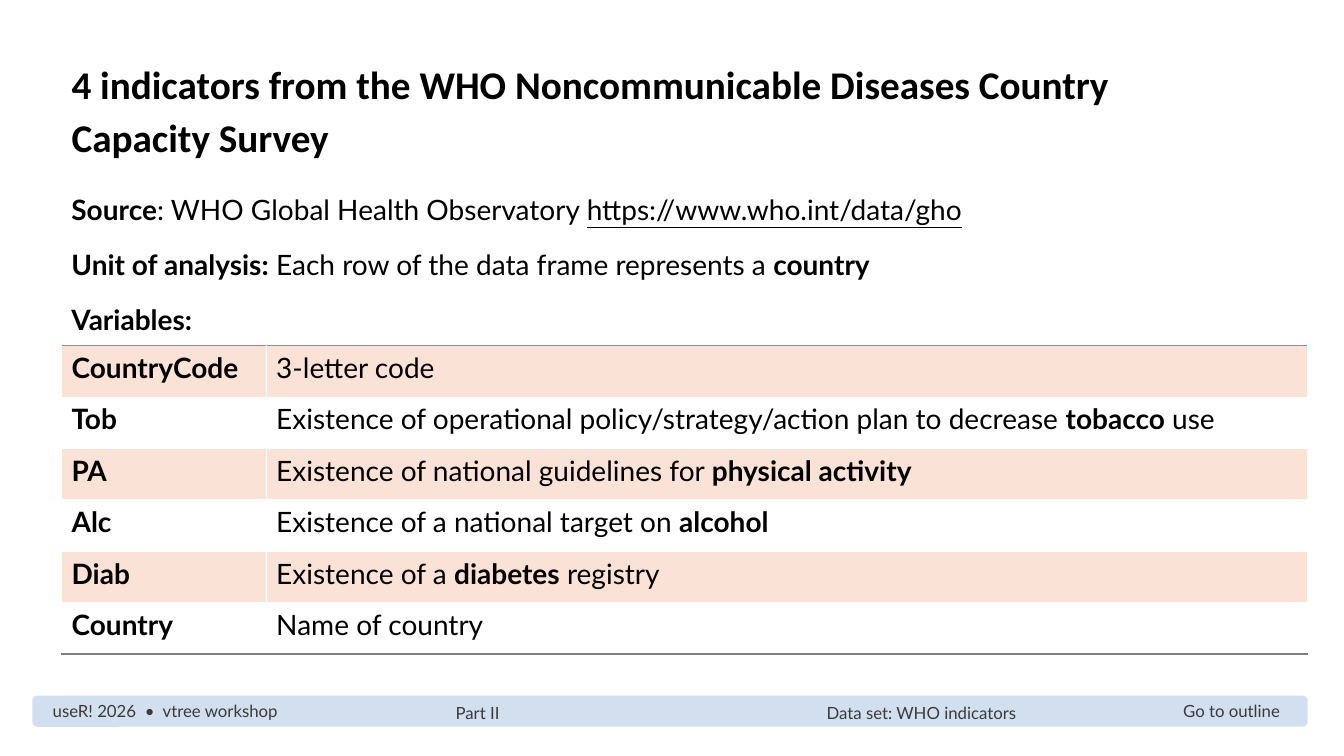
import pptx
import pptx.dml.color
import pptx.enum.shapes
import pptx.enum.text
import pptx.oxml
import pptx.oxml.ns
import pptx.util
from pptx.util import Inches

COLORS = {
    "text": "000000",
    "footer_text": "3A3A3A",
    "footer_bar": "D2DFEE",
    "accent": "E97132",
    "bottom_rule": "7F7F7F",
}
ALIGN = pptx.enum.text.PP_ALIGN
ANCHOR = pptx.enum.text.MSO_ANCHOR

FACTS = [
    [("Source", "b"), (": WHO Global Health Observatory ", ""),
     ("https://www.who.int/data/gho", "u")],
    [("Unit of analysis:", "b"),
     (" Each row of the data frame represents a ", ""), ("country", "b")],
    [("Variables:", "b")],
]
VARIABLES = [
    ("CountryCode", [("3-letter code", "")]),
    ("Tob", [("Existence of operational policy/strategy/action plan to decrease ", ""),
             ("tobacco", "b"), (" use", "")]),
    ("PA", [("Existence of national guidelines for ", ""), ("physical activity", "b")]),
    ("Alc", [("Existence of a national target on ", ""), ("alcohol", "b")]),
    ("Diab", [("Existence of a ", ""), ("diabetes", "b"), (" registry", "")]),
    ("Country", [("Name of country", "")]),
]


def rgb(name):
    return pptx.dml.color.RGBColor.from_string(COLORS[name])


def style_font(font, size, color, face="Lato", bold=False):
    font.name = face
    font.size = pptx.util.Pt(size)
    font.color.rgb = rgb(color)
    font.bold = bold


def write_runs(paragraph, parts):
    for words, style in parts:
        run = paragraph.add_run()
        run.text = words
        style_font(run.font, 20, "text", bold="b" in style)
        if "u" in style:
            run.font.underline = True


def add_heading(slide):
    heading = slide.shapes.title
    heading.left, heading.top = Inches(0.61), Inches(0.48)
    heading.width, heading.height = Inches(11.89), Inches(1.2)
    frame = heading.text_frame
    frame.text = "4 indicators from the WHO Noncommunicable Diseases Country Capacity Survey"
    frame.auto_size = pptx.enum.text.MSO_AUTO_SIZE.NONE
    frame.word_wrap = True
    frame.vertical_anchor = ANCHOR.TOP
    paragraph = frame.paragraphs[0]
    paragraph.alignment = ALIGN.LEFT
    paragraph.line_spacing = 1.14
    style_font(paragraph.runs[0].font, 28, "text", "Calibri", True)


def add_facts(slide):
    box = slide.shapes.add_textbox(Inches(0.61), Inches(1.81), Inches(11.89), Inches(1.6))
    frame = box.text_frame
    frame.word_wrap = True
    for index, parts in enumerate(FACTS):
        paragraph = frame.add_paragraph() if index else frame.paragraphs[0]
        paragraph.line_spacing = 1.14
        if index:
            paragraph.space_before = pptx.util.Pt(12)
        write_runs(paragraph, parts)


def tint_cell(cell):
    cell.fill.solid()
    cell.fill.fore_color.rgb = rgb("accent")
    color = cell._tc.tcPr.find(".//" + pptx.oxml.ns.qn("a:srgbClr"))
    color.append(pptx.oxml.parse_xml(
        f'<a:alpha {pptx.oxml.ns.nsdecls("a")} val="20000"/>'))


def rule_cell(cell, side, color):
    cell._tc.get_or_add_tcPr().insert(0, pptx.oxml.parse_xml(
        f'<a:{side} {pptx.oxml.ns.nsdecls("a")} w="12700"><a:solidFill>'
        f'<a:srgbClr val="{COLORS[color]}"/></a:solidFill></a:{side}>'))


def add_variables(slide):
    row_height = Inches(0.51)
    table = slide.shapes.add_table(
        len(VARIABLES), 2, Inches(0.61), Inches(3.43),
        Inches(12.36), row_height * len(VARIABLES)).table
    table.first_row = table.horz_banding = False
    table.columns[0].width, table.columns[1].width = Inches(2.03), Inches(10.33)
    for index, (name, meaning) in enumerate(VARIABLES):
        table.rows[index].height = row_height
        for column, parts in enumerate(([(name, "b")], meaning)):
            cell = table.cell(index, column)
            write_runs(cell.text_frame.paragraphs[0], parts)
            if index % 2:
                cell.fill.background()
            else:
                tint_cell(cell)
            if index == 0:
                rule_cell(cell, "lnT", "accent")
            elif index == len(VARIABLES) - 1:
                rule_cell(cell, "lnB", "bottom_rule")


def add_footer_bar(slide):
    bar = slide.shapes.add_shape(
        pptx.enum.shapes.MSO_SHAPE.ROUNDED_RECTANGLE,
        Inches(0.32), Inches(6.9), Inches(12.65), Inches(0.31))
    bar.shadow.inherit = False
    bar.fill.solid()
    bar.fill.fore_color.rgb = rgb("footer_bar")
    bar.line.fill.background()


def add_footer_text(slide, left, top, width, height, entries):
    box = slide.shapes.add_textbox(Inches(left), Inches(top), Inches(width), Inches(height))
    frame = box.text_frame
    frame.word_wrap = True
    frame.vertical_anchor = ANCHOR.MIDDLE
    for index, (words, alignment) in enumerate(entries):
        paragraph = frame.add_paragraph() if index else frame.paragraphs[0]
        paragraph.text = words
        paragraph.alignment = alignment
        style_font(paragraph.runs[0].font, 12, "footer_text")
    if len(entries) > 1:
        box.element.txBody.bodyPr.set("numCol", str(len(entries)))


def main():
    deck = pptx.Presentation()
    deck.slide_width, deck.slide_height = Inches(13.33), Inches(7.5)
    slide = deck.slides.add_slide(deck.slide_layouts[5])
    add_footer_bar(slide)
    add_footer_text(slide, 0.36, 6.85, 2.56, 0.4,
                    [("useR! 2026  •  vtree workshop", ALIGN.CENTER)])
    add_footer_text(slide, 11.54, 6.89, 1.35, 0.32, [("Go to outline", ALIGN.CENTER)])
    add_footer_text(slide, 4.42, 6.87, 5.76, 0.4,
                    [("Part II", ALIGN.LEFT), ("Data set: WHO indicators", ALIGN.RIGHT)])
    add_heading(slide)
    add_facts(slide)
    add_variables(slide)
    deck.save("out.pptx")


if __name__ == "__main__":
    main()
